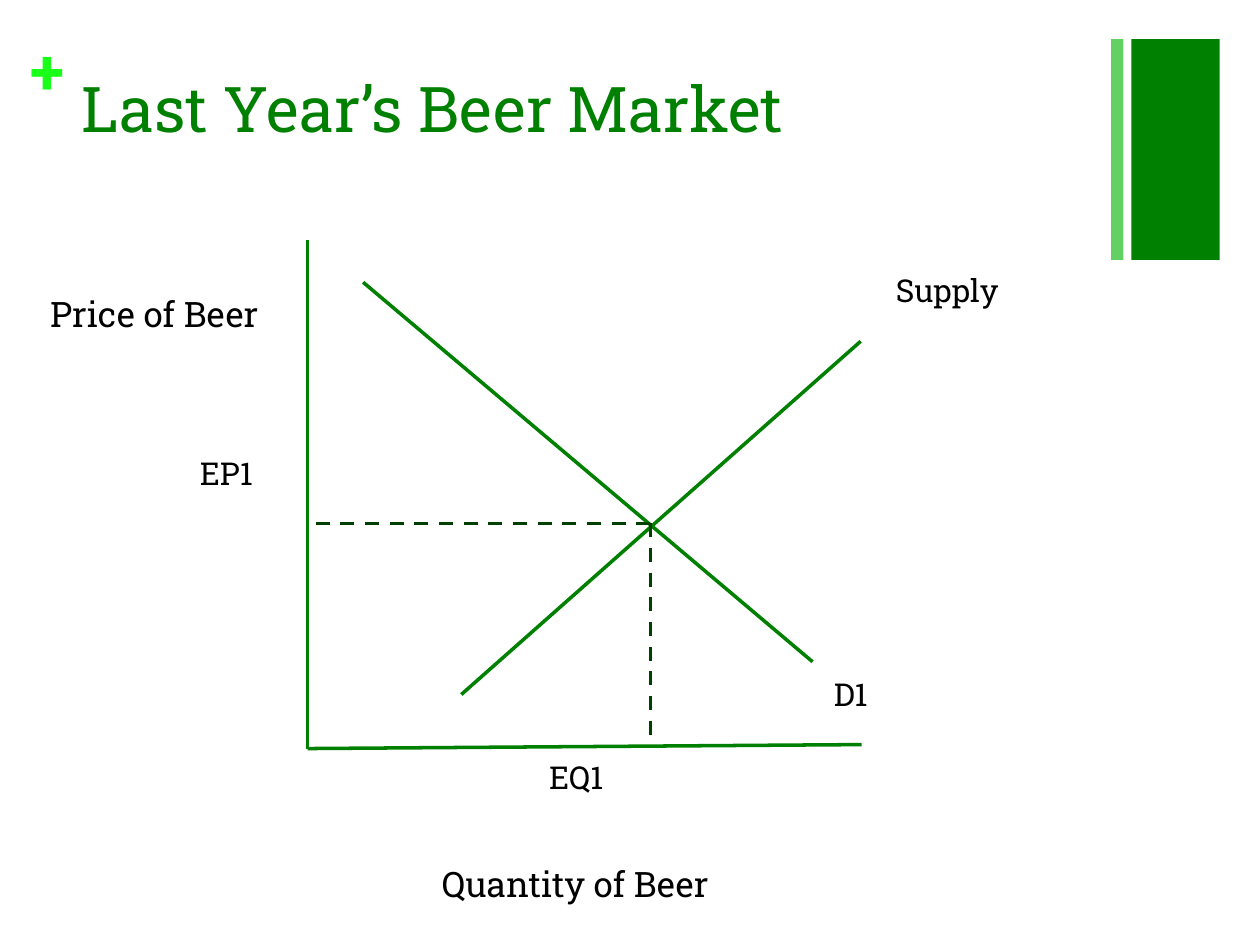
from pptx import Presentation
from pptx.dml.color import RGBColor
from pptx.enum.dml import MSO_LINE
from pptx.enum.shapes import MSO_CONNECTOR, MSO_SHAPE
from pptx.enum.text import MSO_ANCHOR, MSO_AUTO_SIZE
from pptx.oxml.ns import qn
from pptx.util import Cm, Pt
from lxml import etree

RECTANGLE = MSO_SHAPE.RECTANGLE
STRAIGHT = MSO_CONNECTOR.STRAIGHT
DASH = MSO_LINE.DASH
TOP = MSO_ANCHOR.TOP
FIT_SHAPE = MSO_AUTO_SIZE.SHAPE_TO_FIT_TEXT
FIXED = MSO_AUTO_SIZE.NONE

FONT = "Roboto Slab"
COLORS = {
    "green": "008000",
    "light": "63D063",
    "bright": "1AFF1A",
    "dark": "004000",
    "black": "000000",
}

deck = Presentation()
deck.slide_width = Cm(25.4)
deck.slide_height = Cm(19.05)
page = deck.slides.add_slide(deck.slide_layouts[6])


def add_text(text, left, top, width, height, size, color, bold=False, fit=FIT_SHAPE):
    box = page.shapes.add_textbox(Cm(left), Cm(top), Cm(width), Cm(height))
    frame = box.text_frame
    frame.word_wrap = True
    frame.auto_size = fit
    frame.vertical_anchor = TOP
    span = frame.paragraphs[0].add_run()
    span.text = text
    span.font.name = FONT
    span.font.size = Pt(size)
    span.font.bold = bold
    span.font.color.rgb = RGBColor.from_string(COLORS[color])
    return frame


def add_line(start_x, start_y, end_x, end_y, color):
    line = page.shapes.add_connector(
        STRAIGHT, Cm(start_x), Cm(start_y), Cm(end_x), Cm(end_y))
    line.line.color.rgb = RGBColor.from_string(COLORS[color])
    line.line.width = Pt(2)
    etree.SubElement(line._element.spPr, qn("a:effectLst"))
    return line


# Corner bars
for left, width, color in [(22.81, 1.78, "green"), (22.4, 0.25, "light")]:
    bar = page.shapes.add_shape(RECTANGLE, Cm(left), Cm(0.79), Cm(width), Cm(4.45))
    bar.shadow.inherit = False
    bar.fill.solid()
    bar.fill.fore_color.rgb = RGBColor.from_string(COLORS[color])
    bar.line.fill.background()

# Plus sign and title
plus = add_text("+", 0.61, 0.64, 0.74, 1.55, 36, "bright", bold=True)
plus.margin_left = plus.margin_top = plus.margin_right = plus.margin_bottom = 0
add_text("Last Year’s Beer Market", 1.4, 1.28, 20.98, 1.55, 36, "green", fit=FIXED)

# Axes, then supply and demand curves
origin_x, origin_y = 6.2, 15.09
add_line(origin_x, 4.83, origin_x, origin_y, "green")
add_line(origin_x, origin_y, 17.37, 15.01, "green")
add_line(9.3, 14.0, 17.35, 6.88, "green")
add_line(7.32, 5.69, 16.38, 13.34, "green")

# Dashed guides from the equilibrium to both axes
balance_x, balance_y = 13.11, 10.55
for end_x, end_y in [(origin_x, balance_y), (balance_x, 15.01)]:
    guide = add_line(balance_x, balance_y, end_x, end_y, "dark")
    guide.line.dash_style = DASH

# Labels
for text, left, top, width, height, size in [
    ("Supply", 17.81, 5.33, 3.73, 1.02, 18),
    ("D1", 16.56, 13.49, 1.65, 1.02, 18),
    ("EQ1", 10.82, 15.16, 2.29, 1.02, 18),
    ("EP1", 3.78, 9.02, 2.41, 1.02, 18),
    ("Price of Beer", 0.76, 5.77, 5.41, 1.12, 20),
    ("Quantity of Beer", 8.66, 17.27, 6.58, 1.12, 20),
]:
    add_text(text, left, top, width, height, size, "black")

deck.save("out.pptx")
